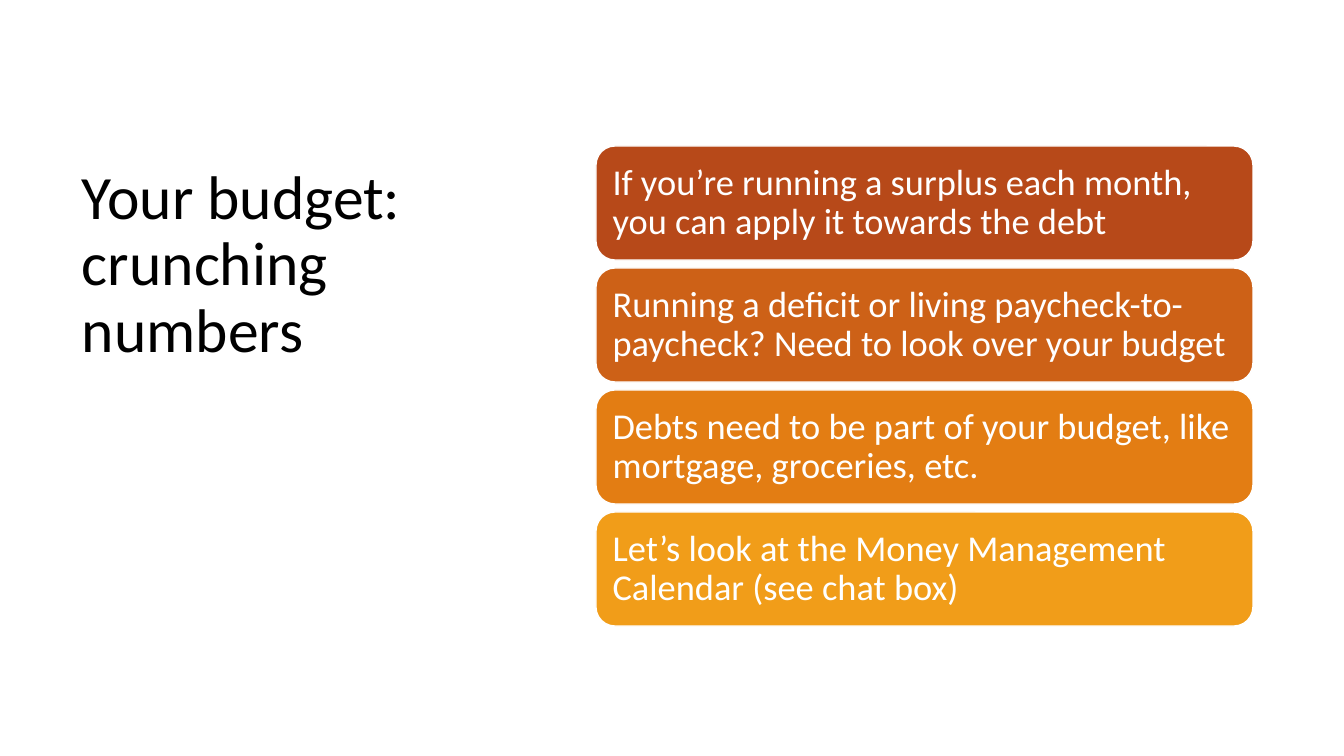
"""Build a slide on crunching budget numbers, with four advice cards."""
import pptx
import pptx.dml.color
import pptx.enum.shapes
import pptx.enum.text
import pptx.util

EMU_PER_PX = 914400 / 100.8
COLORS = {
    "title": "000000",
    "white": "FFFFFF",
    "rust": "B74919",
    "copper": "CD6117",
    "orange": "E37D13",
    "amber": "F19D19",
}
CARDS = [
    ("rust", "If you’re running a surplus each month, you can apply it towards the debt"),
    ("copper", "Running a deficit or living paycheck-to-paycheck? Need to look over your budget"),
    ("orange", "Debts need to be part of your budget, like mortgage, groceries, etc."),
    ("amber", "Let’s look at the Money Management Calendar (see chat box)"),
]
CARD_LEFT, CARD_TOP, CARD_WIDTH, CARD_HEIGHT = 596, 146, 657, 114
CARD_PITCH = 122
CARD_INSET = 11


def px(*lengths):
    return [pptx.util.Emu(round(length * EMU_PER_PX)) for length in lengths]


def write(shape, text, size, color, anchor):
    frame = shape.text_frame
    frame.word_wrap = True
    frame.vertical_anchor = anchor
    frame.text = text
    para = frame.paragraphs[0]
    para.alignment = pptx.enum.text.PP_ALIGN.LEFT
    para.line_spacing = 0.9
    font = para.runs[0].font
    font.name = "Calibri"
    font.size = pptx.util.Pt(size)
    font.color.rgb = pptx.dml.color.RGBColor.from_string(COLORS[color])


deck = pptx.Presentation()
deck.slide_width, deck.slide_height = px(1344, 756)
page = deck.slides.add_slide(deck.slide_layouts[6])

title = page.shapes.add_textbox(*px(72, 161, 418, 296))
write(title, "Your budget: crunching numbers", 44, "title", pptx.enum.text.MSO_ANCHOR.TOP)

for row, (fill, advice) in enumerate(CARDS):
    card = page.shapes.add_shape(
        pptx.enum.shapes.MSO_SHAPE.ROUNDED_RECTANGLE,
        *px(CARD_LEFT, CARD_TOP + row * CARD_PITCH, CARD_WIDTH, CARD_HEIGHT),
    )
    card.shadow.inherit = False
    card.fill.solid()
    card.fill.fore_color.rgb = pptx.dml.color.RGBColor.from_string(COLORS[fill])
    card.line.color.rgb = pptx.dml.color.RGBColor.from_string(COLORS["white"])
    card.line.width = pptx.util.Pt(1)
    frame = card.text_frame
    frame.margin_left, frame.margin_top, frame.margin_right, frame.margin_bottom = px(*[CARD_INSET] * 4)
    write(card, advice, 26, "white", pptx.enum.text.MSO_ANCHOR.MIDDLE)

deck.save("out.pptx")
